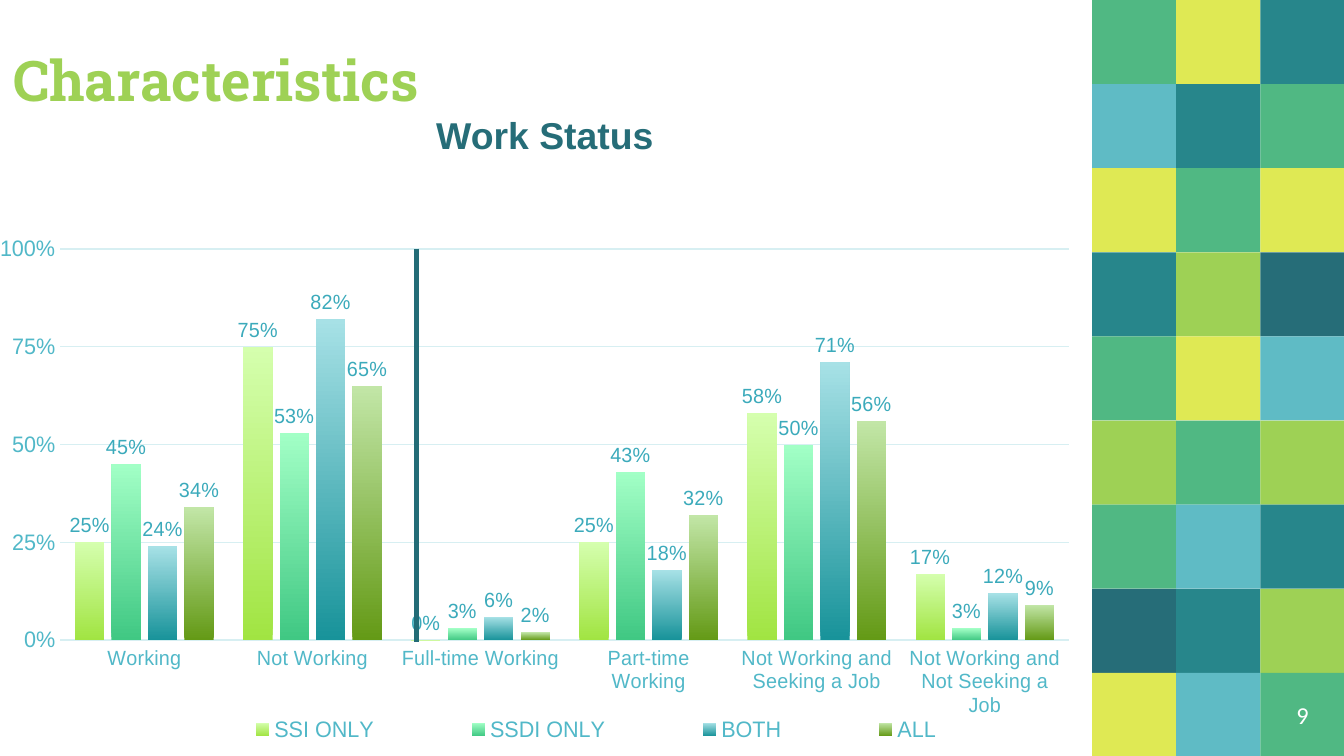
"""Build the work status characteristics slide."""
from dataclasses import dataclass

from lxml.etree import SubElement
from pptx import Presentation
from pptx.chart.data import CategoryChartData
from pptx.dml.color import RGBColor
from pptx.enum.chart import XL_CHART_TYPE, XL_LABEL_POSITION, XL_LEGEND_POSITION, XL_TICK_MARK
from pptx.enum.shapes import MSO_CONNECTOR, MSO_SHAPE
from pptx.enum.text import MSO_ANCHOR, MSO_AUTO_SIZE, PP_ALIGN
from pptx.oxml.ns import qn
from pptx.util import Cm, Pt


@dataclass(frozen=True)
class Theme:
    """Colours, fonts and type sizes of the slide."""
    lime: str = "9ED155"
    dark: str = "266D78"
    yellow: str = "DFE954"
    green: str = "50B883"
    teal: str = "27868B"
    blue: str = "5FBBC5"
    white: str = "FFFFFF"
    divider: str = "236C77"
    axis_text: str = "51B8C8"
    label_text: str = "3BAABB"
    grid: str = "D7EFF2"
    heading_font: str = "Roboto Slab"
    body_font: str = "Arial"
    number_font: str = "Calibri"
    title_size: float = 30
    subtitle_size: float = 20
    number_size: float = 13
    axis_size: float = 12
    label_size: float = 11
    chart_size: float = 10


TILE = 1.59
MOSAIC_LEFT = 20.64
MOSAIC = ("GYT", "BTG", "YGY", "TLD", "GYB", "LGL", "GBT", "DTL", "YBG")
CATEGORIES = ("Working", "Not Working", "Full-time Working", "Part-time Working",
              "Not Working and Seeking a Job", "Not Working and Not Seeking a Job")
SERIES = (
    ("SSI ONLY", (0.25, 0.75, 0, 0.25, 0.58, 0.17), ("A1E442", "D5FFAE")),
    ("SSDI ONLY", (0.45, 0.53, 0.03, 0.43, 0.5, 0.03), ("40C883", "A2FFC6")),
    ("BOTH", (0.24, 0.82, 0.06, 0.18, 0.71, 0.12), ("18939A", "A7E1E6")),
    ("ALL", (0.34, 0.65, 0.02, 0.32, 0.56, 0.09), ("649A16", "C2E6A7")),
)


class SlideBuilder:
    """Hold the theme and the current slide, and draw its elements."""

    def __init__(self, slide, theme):
        """Keep the slide and its theme."""
        self.slide = slide
        self.theme = theme

    def style_font(self, font, size, color, name=None, bold=False):
        """Set the face, size and colour of a font."""
        font.name = name or self.theme.body_font
        font.size = Pt(size)
        font.bold = bold
        font.color.rgb = RGBColor.from_string(color)

    def style_line(self, line, color, width):
        """Set the colour and width of a line."""
        line.color.rgb = RGBColor.from_string(color)
        line.width = Pt(width)

    def set_text(self, shape, text, anchor, alignment, **font):
        """Put one formatted paragraph in a shape."""
        frame = shape.text_frame
        frame.text = text
        frame.word_wrap = True
        frame.auto_size = MSO_AUTO_SIZE.NONE
        frame.vertical_anchor = anchor
        frame.margin_left = frame.margin_right = Cm(0.25)
        frame.margin_top = frame.margin_bottom = Cm(0.25)
        paragraph = frame.paragraphs[0]
        paragraph.alignment = alignment
        self.style_font(paragraph.runs[0].font, **font)
        return paragraph

    def title(self, text, left, top, width, height):
        """Move and fill the title placeholder."""
        shape = self.slide.shapes.title
        shape.left, shape.top = Cm(left), Cm(top)
        shape.width, shape.height = Cm(width), Cm(height)
        self.set_text(shape, text, MSO_ANCHOR.BOTTOM, PP_ALIGN.LEFT, size=self.theme.title_size,
                      color=self.theme.lime, name=self.theme.heading_font, bold=True)

    def text(self, text, left, top, width, height, anchor=MSO_ANCHOR.TOP, **font):
        """Add a centred text box."""
        box = self.slide.shapes.add_textbox(Cm(left), Cm(top), Cm(width), Cm(height))
        return self.set_text(box, text, anchor, PP_ALIGN.CENTER, **font)

    def tile(self, left, top, color):
        """Add one square of the mosaic."""
        shape = self.slide.shapes.add_shape(
            MSO_SHAPE.RECTANGLE, Cm(left), Cm(top), Cm(TILE), Cm(TILE))
        shape.shadow.inherit = False
        shape.fill.solid()
        shape.fill.fore_color.rgb = RGBColor.from_string(color)
        shape.line.fill.background()

    def mosaic(self):
        """Add the coloured grid at the right edge."""
        theme = self.theme
        colors = {"L": theme.lime, "D": theme.dark, "Y": theme.yellow,
                  "G": theme.green, "T": theme.teal, "B": theme.blue}
        for row, keys in enumerate(MOSAIC):
            for column, key in enumerate(keys):
                self.tile(MOSAIC_LEFT + column * TILE, row * TILE, colors[key])

    def line(self, start, end, color, width):
        """Add a straight line without a shadow."""
        connector = self.slide.shapes.add_connector(
            MSO_CONNECTOR.STRAIGHT, *map(Cm, start + end))
        self.style_line(connector.line, color, width)
        SubElement(connector._element.spPr, qn("a:effectLst"))

    def place(self, element, position, inner=False):
        """Give a chart part a fixed place in fractions of the chart."""
        layout = element.find(qn("c:layout"))
        if layout is None:
            layout = SubElement(element, qn("c:layout"))
        element.remove(layout)
        before = element.find(qn("c:legendPos"))
        element.insert(0 if before is None else element.index(before) + 1, layout)
        manual = SubElement(layout, qn("c:manualLayout"))
        settings = [("layoutTarget", "inner")] if inner else []
        settings += [("xMode", "edge"), ("yMode", "edge"), *zip("xywh", position)]
        for tag, value in settings:
            SubElement(manual, qn(f"c:{tag}")).set("val", str(value))

    def chart(self, left, top, width, height):
        """Add the clustered column chart."""
        theme = self.theme
        data = CategoryChartData(number_format="0%")
        data.categories = CATEGORIES
        for name, values, _ in SERIES:
            data.add_series(name, values)
        chart = self.slide.shapes.add_chart(
            XL_CHART_TYPE.COLUMN_CLUSTERED, Cm(left), Cm(top), Cm(width), Cm(height), data).chart
        chart.has_title = False
        self.style_font(chart.font, theme.chart_size, theme.dark)
        self.axes(chart)
        chart.has_legend = True
        chart.legend.position = XL_LEGEND_POSITION.BOTTOM
        chart.legend.include_in_layout = False
        self.style_font(chart.legend.font, theme.axis_size, theme.axis_text)
        self.place(chart.legend._element, (0.12, 0.92, 0.82, 0.07))
        plot = chart.plots[0]
        plot.gap_width, plot.overlap = 100, -24
        plot.vary_by_categories = False
        self.place(chart._chartSpace.chart.plotArea, (0.02, 0.12, 0.96, 0.68), inner=True)
        for series, (_, _, colors) in zip(plot.series, SERIES):
            self.series(series, colors)

    def axes(self, chart):
        """Format both axes and the grid."""
        theme = self.theme
        category, value = chart.category_axis, chart.value_axis
        for axis, size in ((category, theme.label_size), (value, theme.axis_size)):
            axis.major_tick_mark = axis.minor_tick_mark = XL_TICK_MARK.NONE
            self.style_font(axis.tick_labels.font, size, theme.axis_text)
        self.style_line(category.format.line, theme.grid, 1)
        value.format.line.fill.background()
        value.minimum_scale, value.maximum_scale, value.major_unit = 0, 1, 0.25
        value.tick_labels.number_format = "0%"
        value.tick_labels.number_format_is_linked = False
        self.style_line(value.major_gridlines.format.line, theme.grid, 0.75)

    def series(self, series, colors):
        """Give a series its gradient and value labels."""
        fill = series.format.fill
        fill.gradient()
        fill.gradient_angle = 90
        for stop, position, color in zip(fill.gradient_stops, (0, 1), colors):
            stop.position = position
            stop.color.rgb = RGBColor.from_string(color)
        series.invert_if_negative = False
        labels = series.data_labels
        labels.show_value = True
        labels.position = XL_LABEL_POSITION.OUTSIDE_END
        labels.number_format = "0%"
        labels.number_format_is_linked = False
        self.style_font(labels.font, self.theme.label_size, self.theme.label_text)


def main():
    """Build and save the presentation."""
    theme = Theme()
    presentation = Presentation()
    presentation.slide_width, presentation.slide_height = Cm(25.4), Cm(14.29)
    builder = SlideBuilder(presentation.slides.add_slide(presentation.slide_layouts[5]), theme)
    builder.mosaic()
    builder.title("Characteristics", 0, 0, 17.8, 2.39)
    subtitle = builder.text("Work Status", 0, 1.88, 20.6, 1.37, size=theme.subtitle_size,
                            color=theme.dark, bold=True)
    subtitle.space_before = Pt(6)
    builder.text("9", MOSAIC_LEFT + 2 * TILE, 8 * TILE, TILE, TILE, MSO_ANCHOR.MIDDLE,
                 size=theme.number_size, color=theme.white, name=theme.number_font)
    builder.chart(0, 3.4, 20.6, 10.88)
    builder.line((7.87, 4.7), (7.87, 12.14), theme.divider, 2.25)
    presentation.save("out.pptx")


if __name__ == "__main__":
    main()
